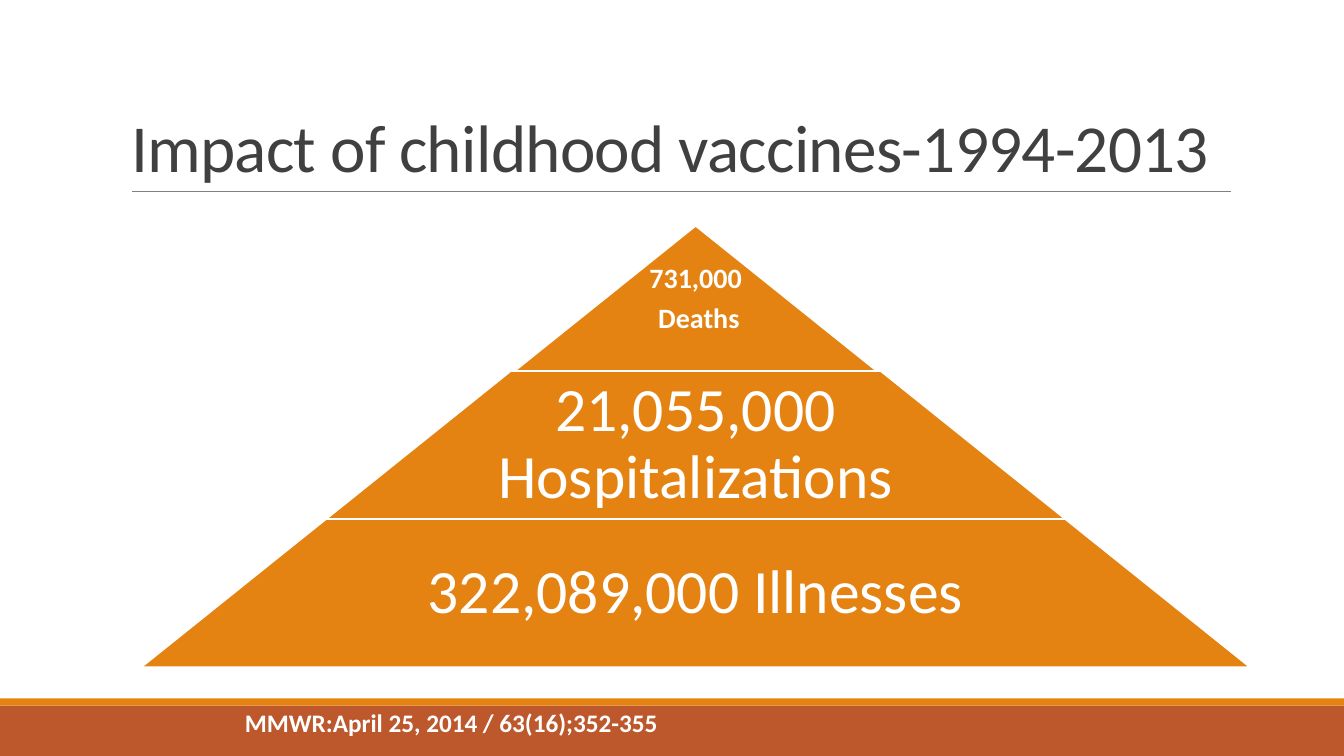
"""Builds a slide with a three-tier pyramid on the impact of childhood vaccines."""
from lxml.etree import SubElement
from pptx import Presentation
from pptx.dml.color import RGBColor as Color
from pptx.enum.shapes import MSO_CONNECTOR as Link, MSO_SHAPE as Kind
from pptx.enum.text import MSO_ANCHOR as Anchor, MSO_AUTO_SIZE as Fit, PP_ALIGN as Align
from pptx.oxml.ns import qn
from pptx.util import Inches, Pt

TITLE = "Impact of childhood vaccines-1994-2013"
SOURCE = "MMWR:April 25, 2014 / 63(16);352-355"
TIERS = [
    {"lines": ["731,000", " Deaths"], "size": 20, "bold": True, "top": 2.24, "share": 1, "pad": 0.03},
    {"lines": ["21,055,000 Hospitalizations"], "size": 44, "bold": False, "top": 3.68, "share": 0.65, "pad": 0.06},
    {"lines": ["322,089,000 Illnesses"], "size": 44, "bold": False, "top": 5.15, "share": 0.65, "pad": 0.06},
]
FONT = "Calibri"
ORANGE = Color(0xE4, 0x83, 0x12)
RUST = Color(0xBD, 0x58, 0x2C)
GREY = Color(0x80, 0x80, 0x80)
DARK = Color(0x40, 0x40, 0x40)
WHITE = Color(0xFF, 0xFF, 0xFF)
WIDE, HIGH = 13.33, 7.5
MID, BASE, STEP = 6.9, 11, 1.47


def box(*nums):
    return [Inches(num) for num in nums]


def add_run(para, text, size, color, bold=False):
    run = para.add_run()
    run.text = text
    font = run.font
    font.name, font.size, font.bold = FONT, Pt(size), bold
    font.color.rgb = color
    return run


def add_form(slide, kind, place, fill):
    form = slide.shapes.add_shape(kind, *box(*place))
    form.shadow.inherit = False
    form.fill.solid()
    form.fill.fore_color.rgb = fill
    form.line.fill.background()
    return form


def add_title(slide):
    title = slide.shapes.title
    title.left, title.top, title.width, title.height = box(1.2, 0.31, 11, 1.59)
    frame = title.text_frame
    frame.word_wrap, frame.auto_size = True, Fit.NONE
    frame.vertical_anchor = Anchor.BOTTOM
    para = frame.paragraphs[0]
    para.alignment, para.line_spacing = Align.LEFT, 0.85
    run = add_run(para, TITLE, 48, DARK)
    run.font._element.set("spc", "-50")


def add_rule(slide):
    rule = slide.shapes.add_connector(Link.STRAIGHT, *box(1.31, 1.9, 12.21, 1.9))
    rule.line.color.rgb, rule.line.width = GREY, Pt(0.5)
    SubElement(rule._element.spPr, qn("a:effectLst"))


def add_tier(slide, rank, tier):
    wide = BASE * rank / len(TIERS)
    form = add_form(slide, Kind.TRAPEZOID, (MID - wide / 2, tier["top"], wide, STEP), ORANGE)
    form.adjustments[0] = BASE / len(TIERS) / 2 / STEP
    form.line.color.rgb, form.line.width = WHITE, Pt(1.25)
    span = wide * tier["share"]
    label = slide.shapes.add_textbox(*box(MID - span / 2, tier["top"], span, STEP))
    frame = label.text_frame
    frame.word_wrap, frame.vertical_anchor = True, Anchor.MIDDLE
    pad = Inches(tier["pad"])
    frame.margin_left = frame.margin_right = frame.margin_top = frame.margin_bottom = pad
    for num, line in enumerate(tier["lines"]):
        para = frame.add_paragraph() if num else frame.paragraphs[0]
        para.alignment, para.line_spacing = Align.CENTER, 0.9
        para.space_after = Pt(round(tier["size"] * 0.35))
        add_run(para, line, tier["size"], WHITE, tier["bold"])


def add_source(slide):
    note = slide.shapes.add_textbox(*box(2.33, 6.97, 6.81, 0.4))
    note.text_frame.word_wrap = True
    add_run(note.text_frame.paragraphs[0], SOURCE, 18, WHITE, True)


def main():
    deck = Presentation()
    deck.slide_width, deck.slide_height = box(WIDE, HIGH)
    slide = deck.slides.add_slide(deck.slide_layouts[5])
    add_form(slide, Kind.RECTANGLE, (0, 7, WIDE, 0.5), RUST)
    add_form(slide, Kind.RECTANGLE, (0, 6.93, WIDE, 0.07), ORANGE)
    add_rule(slide)
    add_title(slide)
    for rank, tier in enumerate(TIERS, 1):
        add_tier(slide, rank, tier)
    add_source(slide)
    deck.save("out.pptx")


if __name__ == "__main__":
    main()
